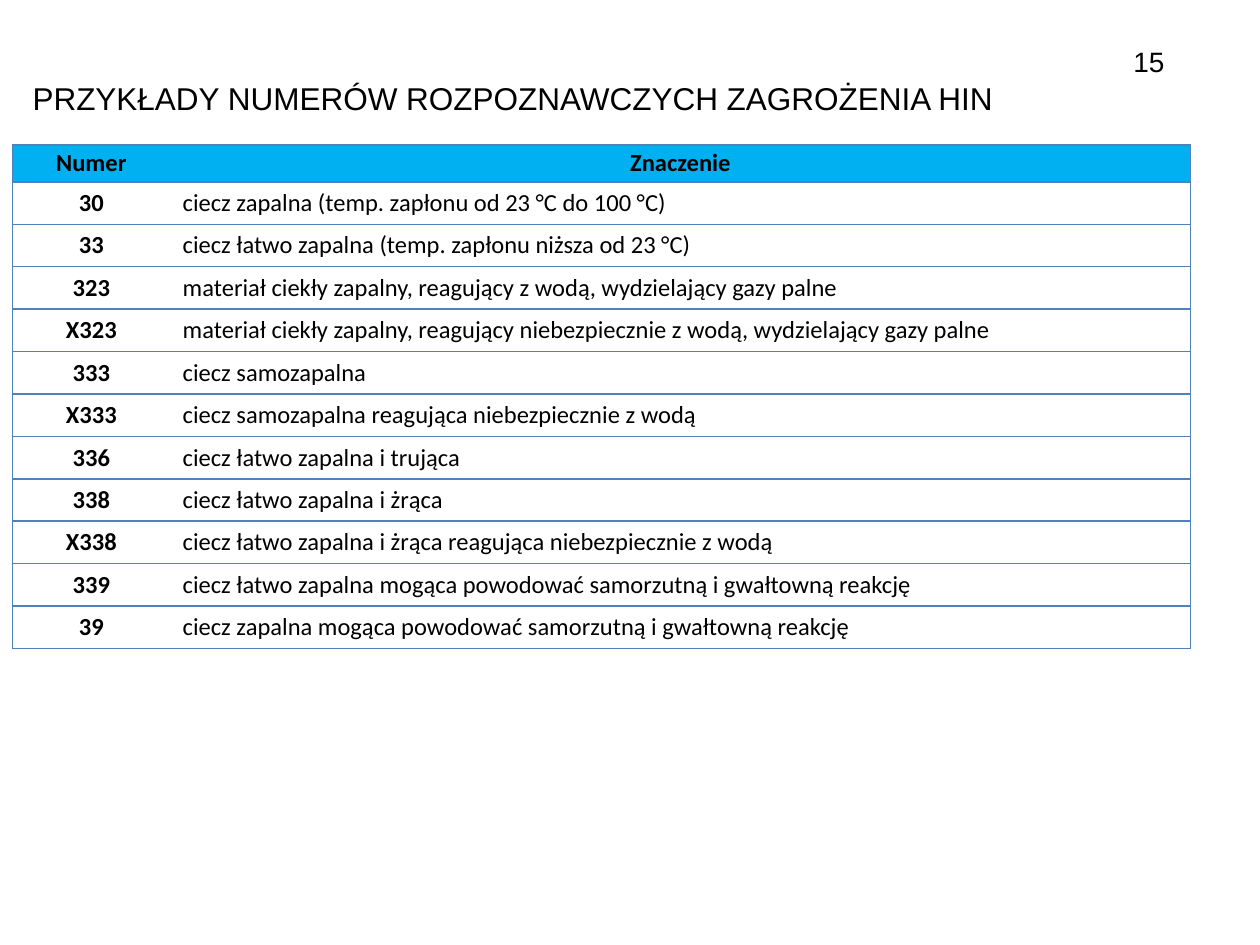
from lxml import etree
from pptx import Presentation
from pptx import util as u
from pptx.dml import color
from pptx.enum import text
from pptx.oxml import ns

COLORS = {"ink": "000000", "paper": "FFFFFF", "header": "00B0F0", "border": "4F81BD"}
HEADINGS = ("Numer", "Znaczenie")
HAZARDS = [
    ("30", "ciecz zapalna (temp. zapłonu od 23 °C do 100 °C)"),
    ("33", "ciecz łatwo zapalna (temp. zapłonu niższa od 23 °C)"),
    ("323", "materiał ciekły zapalny, reagujący z wodą, wydzielający gazy palne"),
    ("X323", "materiał ciekły zapalny, reagujący niebezpiecznie z wodą, wydzielający gazy palne"),
    ("333", "ciecz samozapalna"),
    ("X333", "ciecz samozapalna reagująca niebezpiecznie z wodą"),
    ("336", "ciecz łatwo zapalna i trująca"),
    ("338", "ciecz łatwo zapalna i żrąca"),
    ("X338", "ciecz łatwo zapalna i żrąca reagująca niebezpiecznie z wodą"),
    ("339", "ciecz łatwo zapalna mogąca powodować samorzutną i gwałtowną reakcję"),
    ("39", "ciecz zapalna mogąca powodować samorzutną i gwałtowną reakcję"),
]


class Deck:
    """Slide builder on a grid of 100 columns by 75 rows."""

    def __init__(self):
        self.prs = Presentation()
        self.prs.slide_width, self.prs.slide_height = u.Inches(10), u.Inches(7.5)
        self.s = self.prs.slides.add_slide(self.prs.slide_layouts[6])

    def cols(self, n):
        return int(self.prs.slide_width * n / 100)

    def rows(self, n):
        return int(self.prs.slide_height * n / 75)

    def rgb(self, name):
        return color.RGBColor.from_string(COLORS[name])

    def set_text(self, tf, words, size, font, align, bold=False):
        tf.text = words
        p = tf.paragraphs[0]
        p.alignment = align
        f = p.runs[0].font
        f.size, f.name, f.bold = u.Pt(size), font, bold
        f.color.rgb = self.rgb("ink")

    def label(self, x, y, w, h, words, size, align, anchor):
        sp = self.s.shapes.add_textbox(self.cols(x), self.rows(y), self.cols(w), self.rows(h))
        tf = sp.text_frame
        tf.word_wrap, tf.vertical_anchor = True, anchor
        self.set_text(tf, words, size, "Arial", align)

    def borders(self, cell, sides):
        tc_pr = cell._tc.get_or_add_tcPr()
        for i, side in enumerate("LRTB"):
            ln = etree.Element(ns.qn(f"a:ln{side}"), w=str(u.Pt(1)))
            if side in sides:
                fill = etree.SubElement(ln, ns.qn("a:solidFill"))
                etree.SubElement(fill, ns.qn("a:srgbClr"), val=COLORS["border"])
            else:
                etree.SubElement(ln, ns.qn("a:noFill"))
            tc_pr.insert(i, ln)

    def table(self, x, y, widths, head_h, row_h, headings, body):
        data = [headings, *body]
        heights = [head_h] + [row_h] * len(body)
        tbl = self.s.shapes.add_table(
            len(data), len(widths), self.cols(x), self.rows(y),
            self.cols(sum(widths)), self.rows(sum(heights))).table
        tbl.horz_banding = False
        for col, w in zip(tbl.columns, widths):
            col.width = self.cols(w)
        for r, (row, h) in enumerate(zip(tbl.rows, heights)):
            row.height = self.rows(h)
            for c, cell in enumerate(row.cells):
                head = r == 0
                centred = head or c == 0
                align = text.PP_ALIGN.CENTER if centred else text.PP_ALIGN.LEFT
                self.set_text(cell.text_frame, data[r][c], 14, "Calibri", align, centred)
                cell.vertical_anchor = text.MSO_ANCHOR.MIDDLE
                if head:
                    cell.margin_left = cell.margin_right = self.cols(0.6)
                    cell.margin_top = cell.margin_bottom = self.rows(0.3)
                cell.fill.solid()
                cell.fill.fore_color.rgb = self.rgb("header" if head else "paper")
                self.borders(cell, "LTB" if c == 0 else "RTB")


def main():
    d = Deck()
    d.label(1.6, 5.8, 81.2, 7.3, "PRZYKŁADY NUMERÓW ROZPOZNAWCZYCH ZAGROŻENIA HIN",
            18, text.PP_ALIGN.LEFT, text.MSO_ANCHOR.TOP)
    d.label(70, 2.3, 23.4, 5.2, "15", 16, text.PP_ALIGN.RIGHT, text.MSO_ANCHOR.MIDDLE)
    d.table(1, 11.5, (12.5, 81), 2.9, 3.37, HEADINGS, HAZARDS)
    d.prs.save("out.pptx")


if __name__ == "__main__":
    main()
